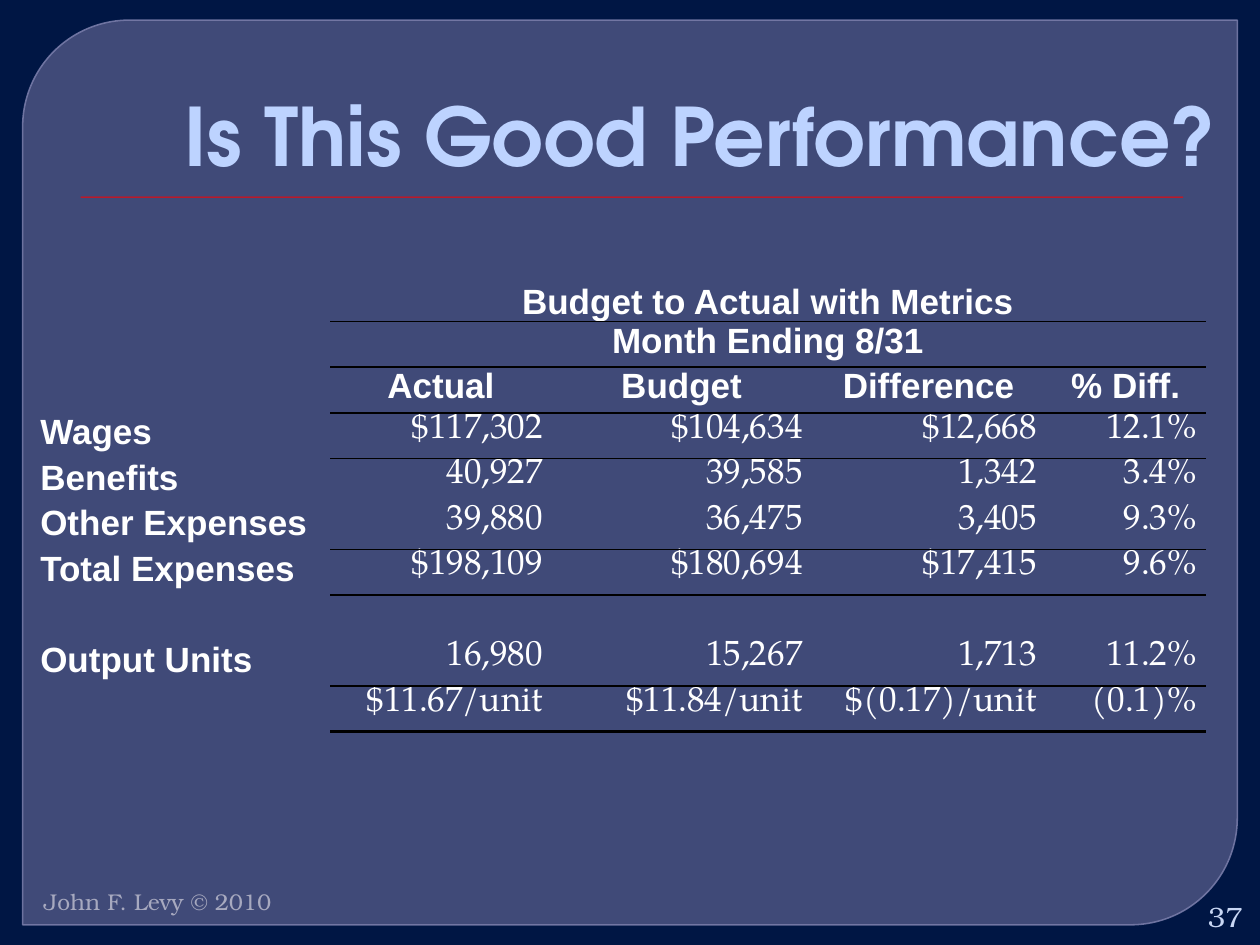
from lxml.etree import SubElement
from pptx import Presentation
from pptx.dml.color import RGBColor
from pptx.enum.shapes import MSO_SHAPE
from pptx.enum.text import MSO_ANCHOR, MSO_AUTO_SIZE, PP_ALIGN
from pptx.oxml.ns import qn
from pptx.util import Inches, Pt

NAVY = RGBColor(0x00, 0x16, 0x44)
SLATE = RGBColor(0x63, 0x67, 0x94)
EDGE = RGBColor(0x79, 0x7D, 0xAA)
RED = RGBColor(0xFF, 0x00, 0x00)
SKY = RGBColor(0xBD, 0xD3, 0xFF)
PALE = RGBColor(0xC9, 0xD7, 0xF4)
GREY = RGBColor(0xA7, 0xA9, 0xBF)
WHITE = RGBColor(0xFF, 0xFF, 0xFF)
BLACK = RGBColor(0x00, 0x00, 0x00)

HEAD, SERIF, SANS, BODY = ("TeX Gyre Adventor", "TeX Gyre Bonum",
                           "Arial", "TeX Gyre Pagella")
PLAIN = "{2D5ABB26-0587-4C30-8999-92F81FD0307C}"  # no style, no grid

COLS = [2.37, 1.76, 2.06, 1.86, 1.27]
ROWS = [
    ["", "Budget to Actual with Metrics", "", "", ""],
    ["", "Month Ending 8/31", "", "", ""],
    ["", "Actual", "Budget", "Difference", "% Diff."],
    ["Wages", "$117,302", "$104,634", "$12,668", "12.1%"],
    ["Benefits", "40,927", "39,585", "1,342", "3.4%"],
    ["Other Expenses", "39,880", "36,475", "3,405", "9.3%"],
    ["Total Expenses", "$198,109", "$180,694", "$17,415", "9.6%"],
    ["", "", "", "", ""],
    ["Output Units", "16,980", "15,267", "1,713", "11.2%"],
    ["", "$11.67/unit", "$11.84/unit", "$(0.17)/unit", "(0.1)%"],
    ["", "", "", "", ""],
]
HEADS = 3  # number of heading rows
RULES = {0: 1, 1: 1, 2: 1, 5: 1, 8: 1, 9: 1.5}  # row: width of line below


def box(left, top, width, height):
    return [Inches(n) for n in (left, top, width, height)]


def style(para, font, size, color, bold=False, align=PP_ALIGN.LEFT):
    para.alignment = align
    for run in para.runs:
        run.font.name = font
        run.font.size = Pt(size)
        run.font.color.rgb = color
        run.font.bold = bold


def fade(fill, percent):
    """Make a solid fill or line partly transparent."""
    color = fill._xPr.find(qn("a:solidFill"))[0]
    SubElement(color, qn("a:alpha")).set("val", str(percent * 1000))


def add_panel(slide, area, line):
    # Rounded panel, behind everything else
    panel = slide.shapes.add_shape(MSO_SHAPE.ROUND_2_DIAG_RECTANGLE, *area)
    panel.adjustments[0] = 0.118
    panel.adjustments[1] = 0
    panel.fill.solid()
    panel.fill.fore_color.rgb = SLATE
    fade(panel.fill, 65)
    panel.line.width = Pt(0.87)
    panel.line.color.rgb = EDGE
    fade(panel.line.fill, 88)
    # Red rule under the title
    rule = slide.shapes.add_shape(MSO_SHAPE.RECTANGLE, *line)
    rule.fill.solid()
    rule.fill.fore_color.rgb = RED
    rule.line.fill.background()
    tree = slide.shapes._spTree
    for spot, shape in enumerate((panel, rule), 2):
        shape.shadow.inherit = False
        tree.insert(spot, shape._element)


def add_title(slide, area, text):
    title = slide.shapes.title
    title.left, title.top, title.width, title.height = area
    frame = title.text_frame
    frame.text = text
    frame.auto_size = MSO_AUTO_SIZE.NONE
    frame.vertical_anchor = MSO_ANCHOR.BOTTOM
    style(frame.paragraphs[0], HEAD, 46, SKY, True, PP_ALIGN.RIGHT)


def add_note(slide, area, text, size, color, align, anchor):
    frame = slide.shapes.add_textbox(*area).text_frame
    frame.word_wrap = True
    frame.vertical_anchor = anchor
    frame.text = text
    style(frame.paragraphs[0], SERIF, size, color, align=align)


def add_edge(cell, tag, width):
    edge = SubElement(cell._tc.get_or_add_tcPr(), qn(tag), w=str(Pt(width)))
    fill = SubElement(edge, qn("a:solidFill"))
    SubElement(fill, qn("a:srgbClr"), val=str(BLACK))


def fill_cell(cell, text, row, col):
    cell.margin_left = cell.margin_right = Inches(0.07)
    cell.margin_top = cell.margin_bottom = 0
    cell.vertical_anchor = MSO_ANCHOR.TOP if row else MSO_ANCHOR.BOTTOM
    # Lines run under the figures only, not under the row labels
    if col:
        for tag, key in (("a:lnT", row - 1), ("a:lnB", row)):
            if key in RULES:
                add_edge(cell, tag, RULES[key])
    cell.fill.background()
    if not text:
        return
    cell.text = text
    para = cell.text_frame.paragraphs[0]
    para.space_before = Pt(6 if row else 0)
    if row < HEADS:
        style(para, SANS, 20, WHITE, True, PP_ALIGN.CENTER)
    elif col == 0:
        style(para, SANS, 20, WHITE, True)
    else:
        style(para, BODY, 20, WHITE, align=PP_ALIGN.RIGHT)


def add_budget(slide, area):
    table = slide.shapes.add_table(len(ROWS), len(COLS), *area).table
    table.first_row = table.horz_banding = False
    table._tbl.tblPr.find(qn("a:tableStyleId")).text = PLAIN
    for col, width in zip(table.columns, COLS):
        col.width = Inches(width)
    # The first row is twice as high as the others
    unit = area[3] // (len(ROWS) + 1)
    for num, row in enumerate(table.rows):
        row.height = unit if num else 2 * unit
    for num in (0, 1):
        table.cell(num, 1).merge(table.cell(num, len(COLS) - 1))
    for num, texts in enumerate(ROWS):
        for col, text in enumerate(texts):
            fill_cell(table.cell(num, col), text, num, col)


def main():
    deck = Presentation()
    deck.slide_width, deck.slide_height = Inches(10), Inches(7.5)
    slide = deck.slides.add_slide(deck.slide_layouts[5])
    slide.background.fill.solid()
    slide.background.fill.fore_color.rgb = NAVY

    add_panel(slide, box(0.18, 0.16, 9.64, 7.18), box(0.64, 1.56, 8.75, 0.01))
    add_title(slide, box(0.25, 0.33, 9.5, 1.17), "Is This Good Performance?")
    add_note(slide, box(9.35, 7.12, 0.61, 0.3), "37", 16, PALE,
             PP_ALIGN.RIGHT, MSO_ANCHOR.MIDDLE)
    add_budget(slide, box(0.25, 1.83, 9.32, 4.34))
    add_note(slide, box(0.25, 7, 4.61, 0.3), "John F. Levy © 2010", 13, GREY,
             PP_ALIGN.LEFT, MSO_ANCHOR.TOP)
    deck.save("out.pptx")


if __name__ == "__main__":
    main()
